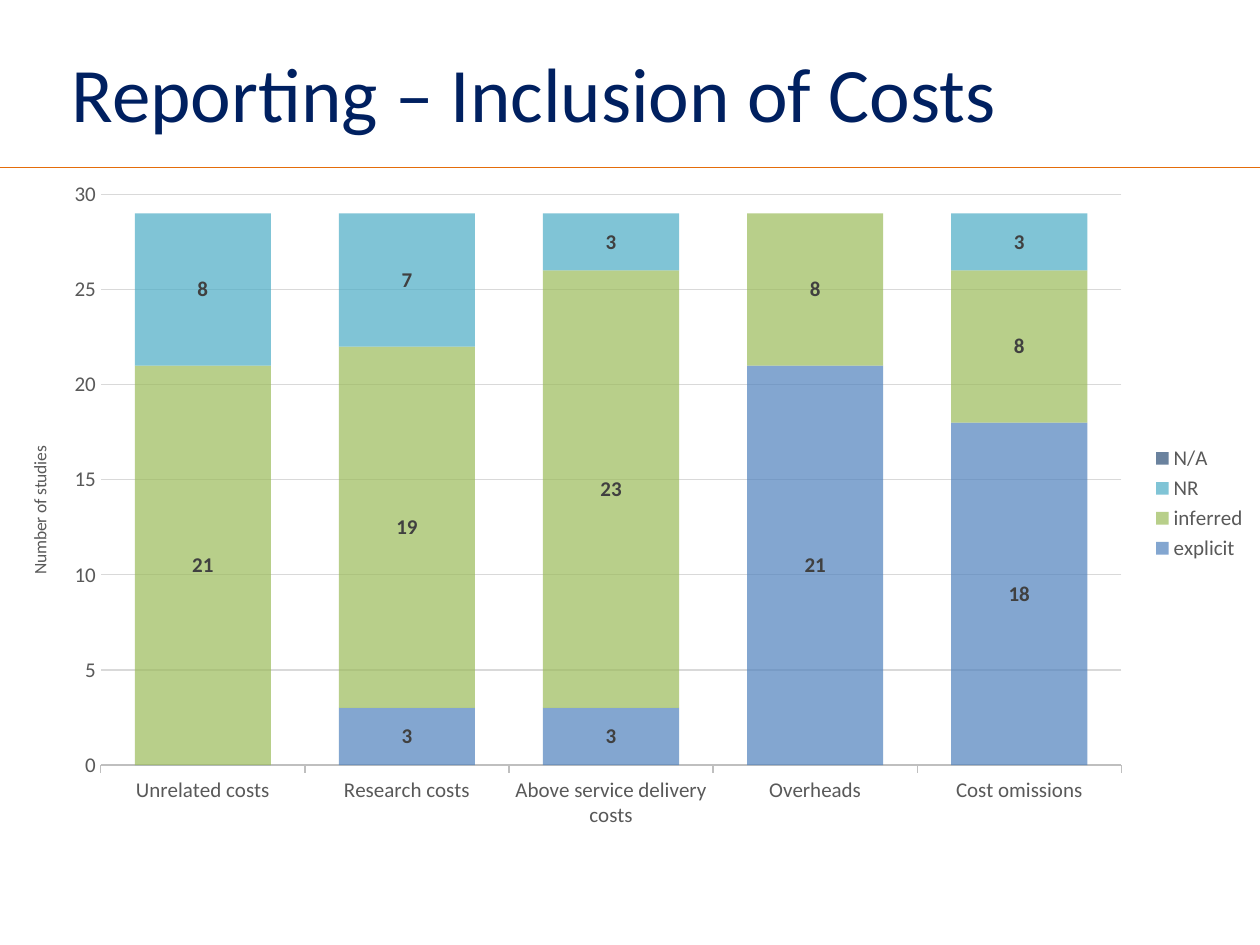
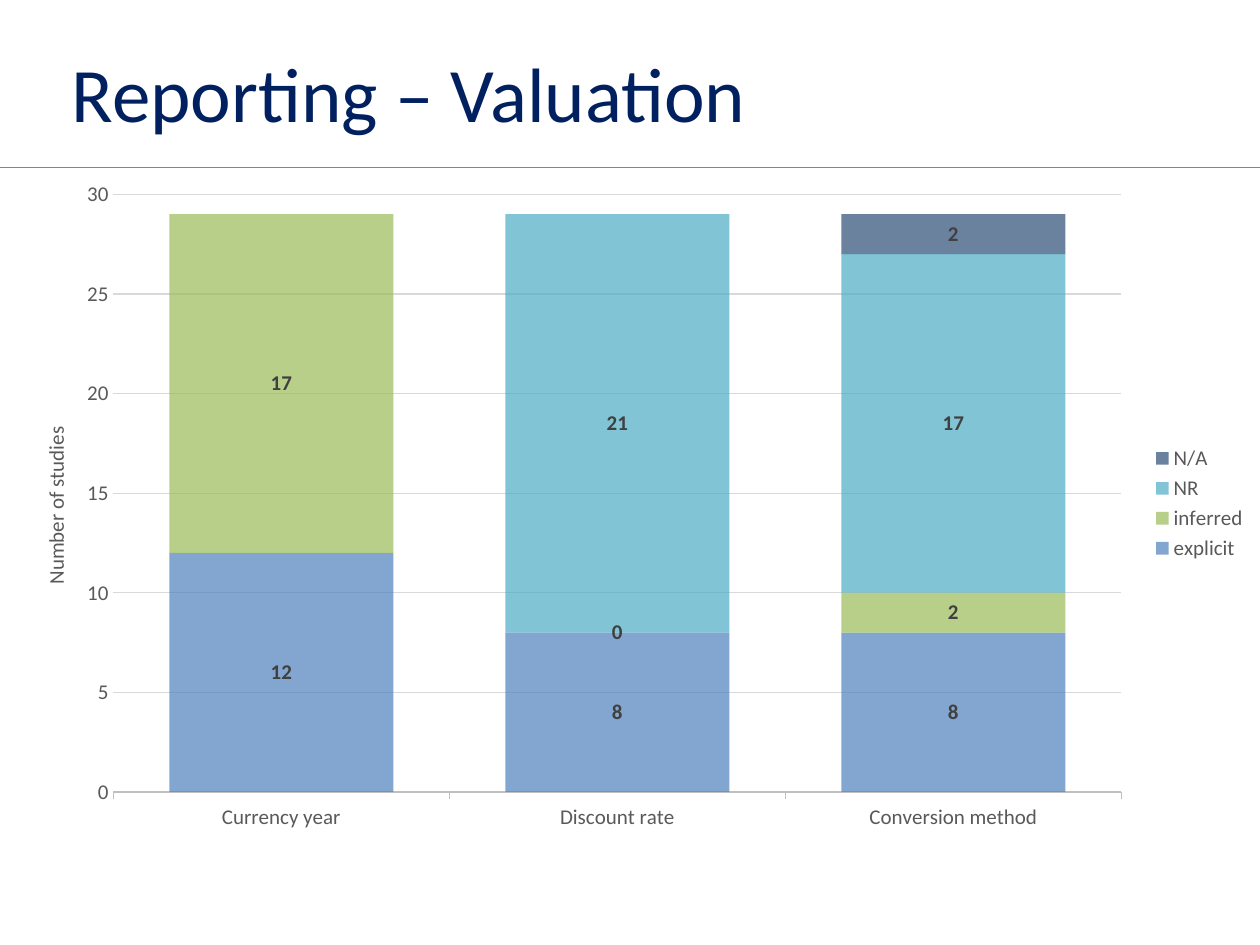
import pptx
import pptx.chart.data
import pptx.dml.color
import pptx.enum.chart
import pptx.enum.shapes
import pptx.enum.text
import pptx.oxml
import pptx.oxml.ns
import pptx.util
from lxml import etree

Inches, Pt = pptx.util.Inches, pptx.util.Pt
qn = pptx.oxml.ns.qn
xl = pptx.enum.chart

FONT = "Calibri"
COLORS = {
    "title": "002060", "rule": "E46C0A", "text": "595959", "label": "404040",
    "axis": "BFBFBF", "grid": "D9D9D9",
    "explicit": "4F81BD", "inferred": "9BBB59", "NR": "4BACC6", "N/A": "2C4D75",
}
OPACITY = 70
HIDE_ZERO = "0;;"

# Each slide: its data, axis title and plot area (fractions of the chart frame)
SLIDES = [
    {
        "title": "Reporting – Inclusion of Costs",
        "cats": ["Unrelated costs", "Research costs", "Above service delivery costs",
                 "Overheads", "Cost omissions"],
        "series": {"explicit": [0, 3, 3, 21, 18], "inferred": [21, 19, 23, 8, 8],
                   "NR": [8, 7, 3, 0, 3], "N/A": [0, 0, 0, 0, 0]},
        "axis_size": 10,
        "axis_pos": {"x": 0.02, "y": 0.41},
        "plot": {"x": 0.08, "y": 0.04, "w": 0.81, "h": 0.85},
    },
    {
        "title": "Reporting – Valuation",
        "cats": ["Currency year", "Discount rate", "Conversion method"],
        "series": {"explicit": [12, 8, 8], "inferred": [17, 0, 2],
                   "NR": [0, 21, 17], "N/A": [0, 0, 2]},
        "axis_size": 12,
        "axis_pos": {"x": 0.03, "y": 0.38},
        "plot": {"x": 0.09, "y": 0.04, "w": 0.8, "h": 0.89},
    },
]


def style_font(font, size, color, bold=False):
    font.name, font.size, font.bold = FONT, Pt(size), bold
    font.color.rgb = pptx.dml.color.RGBColor.from_string(COLORS[color])


def place(parent, index, box, target=None):
    """Give a chart part a manual layout."""
    for old in parent.findall(qn("c:layout")):
        parent.remove(old)
    layout = pptx.oxml.parse_xml(
        f'<c:layout {pptx.oxml.ns.nsdecls("c")}><c:manualLayout/></c:layout>')
    settings = [("layoutTarget", target)] if target else []
    settings += [("xMode", "edge"), ("yMode", "edge")] + list(box.items())
    for tag, val in settings:
        etree.SubElement(layout[0], qn(f"c:{tag}")).set("val", str(val))
    parent.insert(index, layout)


prs = pptx.Presentation()
prs.slide_width, prs.slide_height = Inches(10), Inches(7.5)

for content in SLIDES:
    s = prs.slides.add_slide(prs.slide_layouts[6])

    # Rule under the title
    rule = s.shapes.add_connector(pptx.enum.shapes.MSO_CONNECTOR.STRAIGHT,
                                  0, Inches(1.33), Inches(10), Inches(1.33))
    rule.line.color.rgb = pptx.dml.color.RGBColor.from_string(COLORS["rule"])
    rule.line.width = Pt(1)
    etree.SubElement(rule._element.spPr, qn("a:effectLst"))

    # Title
    sp = s.shapes.add_textbox(Inches(0.47), Inches(0.29), Inches(9.03), Inches(1.04))
    tf = sp.text_frame
    tf.word_wrap = True
    tf.vertical_anchor = pptx.enum.text.MSO_ANCHOR.TOP
    tf.margin_top = Inches(0.07)
    r = tf.paragraphs[0].add_run()
    r.text = content["title"]
    style_font(r.font, 44, "title")

    # Stacked column chart
    data = pptx.chart.data.CategoryChartData()
    data.categories = content["cats"]
    for name, values in content["series"].items():
        data.add_series(name, values)
    chart = s.shapes.add_chart(xl.XL_CHART_TYPE.COLUMN_STACKED, 0, Inches(1.33),
                               Inches(10), Inches(5.33), data).chart
    chart.has_title = False
    style_font(chart.font, 10, "text")
    plot = chart.plots[0]
    plot.gap_width, plot.overlap = 50, 100
    plot.vary_by_categories = False
    place(chart._chartSpace.chart.plotArea, 0, content["plot"], "inner")

    # Series fills and value labels
    for ser in plot.series:
        ser.format.fill.solid()
        ser.format.fill.fore_color.rgb = pptx.dml.color.RGBColor.from_string(COLORS[ser.name])
        clr = ser._element.spPr.find(".//" + qn("a:srgbClr"))
        etree.SubElement(clr, qn("a:alpha")).set("val", str(OPACITY * 1000))
        if not any(ser.values):
            continue
        labels = ser.data_labels
        labels.show_value = True
        labels.position = xl.XL_LABEL_POSITION.CENTER
        labels.number_format = "0" if ser.name == "inferred" else HIDE_ZERO
        labels.number_format_is_linked = False
        style_font(labels.font, 12, "label", bold=True)

    # Axes
    cat, val = chart.category_axis, chart.value_axis
    for axis in (cat, val):
        style_font(axis.tick_labels.font, 12, "text")
    cat.major_tick_mark = xl.XL_TICK_MARK.OUTSIDE
    val.major_tick_mark = xl.XL_TICK_MARK.NONE
    val.minimum_scale, val.maximum_scale, val.major_unit = 0, 30, 5
    val.has_major_gridlines = True
    for line, color in ((cat.format.line, "axis"), (val.major_gridlines.format.line, "grid")):
        line.color.rgb = pptx.dml.color.RGBColor.from_string(COLORS[color])
        line.width = Pt(0.75)
    val.format.line.fill.background()

    # Value axis title
    tf = val.axis_title.text_frame
    tf._txBody.bodyPr.set("rot", "-5400000")
    tf._txBody.bodyPr.set("vert", "horz")
    r = tf.paragraphs[0].add_run()
    r.text = "Number of studies"
    style_font(r.font, content["axis_size"], "text")
    place(val.axis_title._element, 1, content["axis_pos"])

    # Legend
    chart.has_legend = True
    chart.legend.position = xl.XL_LEGEND_POSITION.RIGHT
    chart.legend.include_in_layout = False
    style_font(chart.legend.font, 12, "text")

prs.save("out.pptx")
